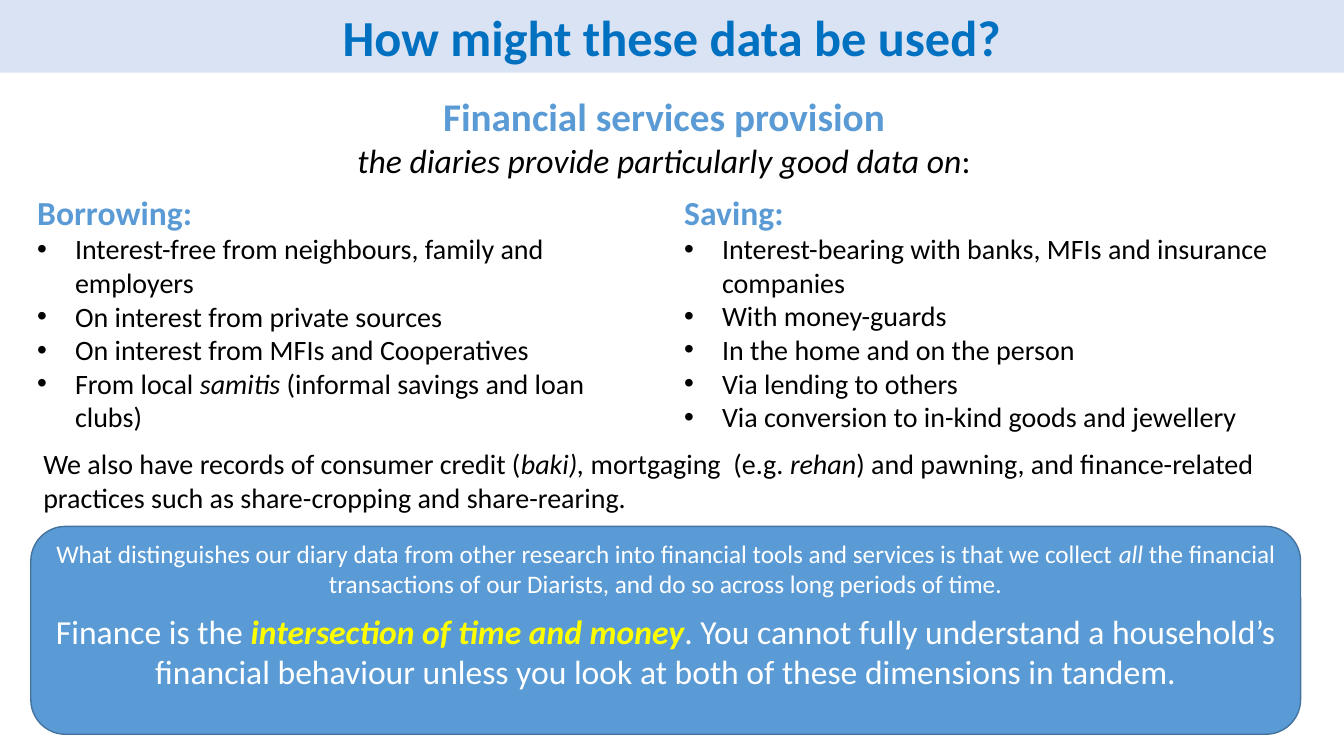
from lxml.etree import SubElement
from pptx import Presentation
from pptx.dml.color import RGBColor
from pptx.enum.shapes import MSO_SHAPE
from pptx.enum.text import MSO_ANCHOR, MSO_AUTO_SIZE, PP_ALIGN
from pptx.oxml.ns import qn
from pptx.util import Pt

# Style: size, colour, bold, italic
STYLES = {
    "title": (36, "0070C0", True, False),
    "topic": (28, "5B9BD5", True, False),
    "head": (24, "5B9BD5", True, False),
    "lead": (24, "000000", False, False),
    "lead-it": (24, "000000", False, True),
    "body": (20, "000000", False, False),
    "body-it": (20, "000000", False, True),
    "note": (18, "FFFFFF", False, False),
    "note-it": (18, "FFFFFF", False, True),
    "claim": (24, "FFFFFF", False, False),
    "key": (24, "FFFF00", True, True),
}

# Each paragraph is a list of (text, style) runs
TITLE = [[("How might these data be used?", "title")]]
INTRO = [
    [("Financial services provision", "topic")],
    [("the diaries provide particularly good data on", "lead-it"), (":", "lead")],
]
BORROW = [
    [("Borrowing:", "head")],
    [("Interest-free from neighbours, family and employers", "body")],
    [("On interest from private sources", "body")],
    [("On interest from MFIs and Cooperatives", "body")],
    [("From local ", "body"), ("samitis", "body-it"),
     (" (informal savings and loan clubs)", "body")],
]
SAVE = [
    [("Saving:", "head")],
    [("Interest-bearing with banks, MFIs and insurance companies", "body")],
    [("With money-guards", "body")],
    [("In the home and on the person", "body")],
    [("Via lending to others", "body")],
    [("Via conversion to in-kind goods and jewellery", "body")],
]
ALSO = [
    [("We also have records of consumer credit (", "body"), ("baki), ", "body-it"),
     ("mortgaging  (e.g. ", "body"), ("rehan", "body-it"),
     (") and pawning, and finance-related practices such as share-cropping "
      "and share-rearing.", "body")],
]
CLAIM = [
    [("What distinguishes our diary data from other research into financial tools "
      "and services is that we collect ", "note"), ("all", "note-it"),
     (" the financial transactions of our Diarists, and do so across long periods "
      "of time.", "note")],
    [("Finance is the ", "claim"), ("intersection of time and money", "key"),
     (". You cannot fully understand a household’s financial behaviour unless you "
      "look at both of these dimensions in tandem.", "claim")],
]

WIDE, HIGH = 960, 540
LEFT, RIGHT = 19.5, 929      # outer edges of the text area
LISTS = 133.2                # top of both lists
INDENT = 27


def color(code):
    return RGBColor.from_string(code)


def write(frame, paras, align=PP_ALIGN.LEFT):
    frame.word_wrap = True
    for i, runs in enumerate(paras):
        para = frame.paragraphs[0] if i == 0 else frame.add_paragraph()
        para.alignment = align
        for text, style in runs:
            run = para.add_run()
            run.text = text
            font = run.font
            size, code, font.bold, font.italic = STYLES[style]
            font.name, font.size = "Calibri", Pt(size)
            font.color.rgb = color(code)


def add_text(slide, box, paras, align=PP_ALIGN.LEFT):
    frame = slide.shapes.add_textbox(*map(Pt, box)).text_frame
    write(frame, paras, align)
    return frame


def bullet(para):
    props = para._p.get_or_add_pPr()
    props.set("marL", str(Pt(INDENT)))
    props.set("indent", str(-Pt(INDENT)))
    SubElement(props, qn("a:buFont")).set("typeface", "Arial")
    SubElement(props, qn("a:buChar")).set("char", "•")


def add_title(slide):
    title = slide.shapes.title
    title.left, title.top, title.width, title.height = map(Pt, (0, 0, WIDE, 52))
    title.fill.solid()
    title.fill.fore_color.rgb = color("DAE3F3")
    frame = title.text_frame
    frame.auto_size = MSO_AUTO_SIZE.NONE
    frame.vertical_anchor = MSO_ANCHOR.BOTTOM
    write(frame, TITLE, PP_ALIGN.CENTER)
    frame.paragraphs[0].line_spacing = 0.9


def add_claim(slide):
    top = 376
    panel = slide.shapes.add_shape(
        MSO_SHAPE.ROUNDED_RECTANGLE, Pt(22), Pt(top), Pt(RIGHT - 22), Pt(148.5))
    panel.shadow.inherit = False
    panel.fill.solid()
    panel.fill.fore_color.rgb = color("5B9BD5")
    panel.line.color.rgb = color("43739E")
    panel.line.width = Pt(1)
    frame = panel.text_frame
    frame.vertical_anchor = MSO_ANCHOR.MIDDLE
    frame.margin_bottom = Pt(25.6)
    write(frame, CLAIM, PP_ALIGN.CENTER)
    frame.paragraphs[1].space_before = Pt(8.5)


def main():
    deck = Presentation()
    deck.slide_width, deck.slide_height = Pt(WIDE), Pt(HIGH)
    slide = deck.slides.add_slide(deck.slide_layouts[5])
    add_title(slide)
    add_text(slide, (LEFT, 62.6, RIGHT - LEFT, 83.5), INTRO, PP_ALIGN.CENTER)
    for left, width, high, paras in ((LEFT, 422.6, 181.4, BORROW),
                                     (481.7, RIGHT - 481.7, 194.4, SAVE)):
        frame = add_text(slide, (left, LISTS, width, high), paras)
        for para in frame.paragraphs[1:]:
            bullet(para)
    add_text(slide, (23.8, 315.4, 900.7, 55.4), ALSO)
    add_claim(slide)
    deck.save("out.pptx")


if __name__ == "__main__":
    main()
